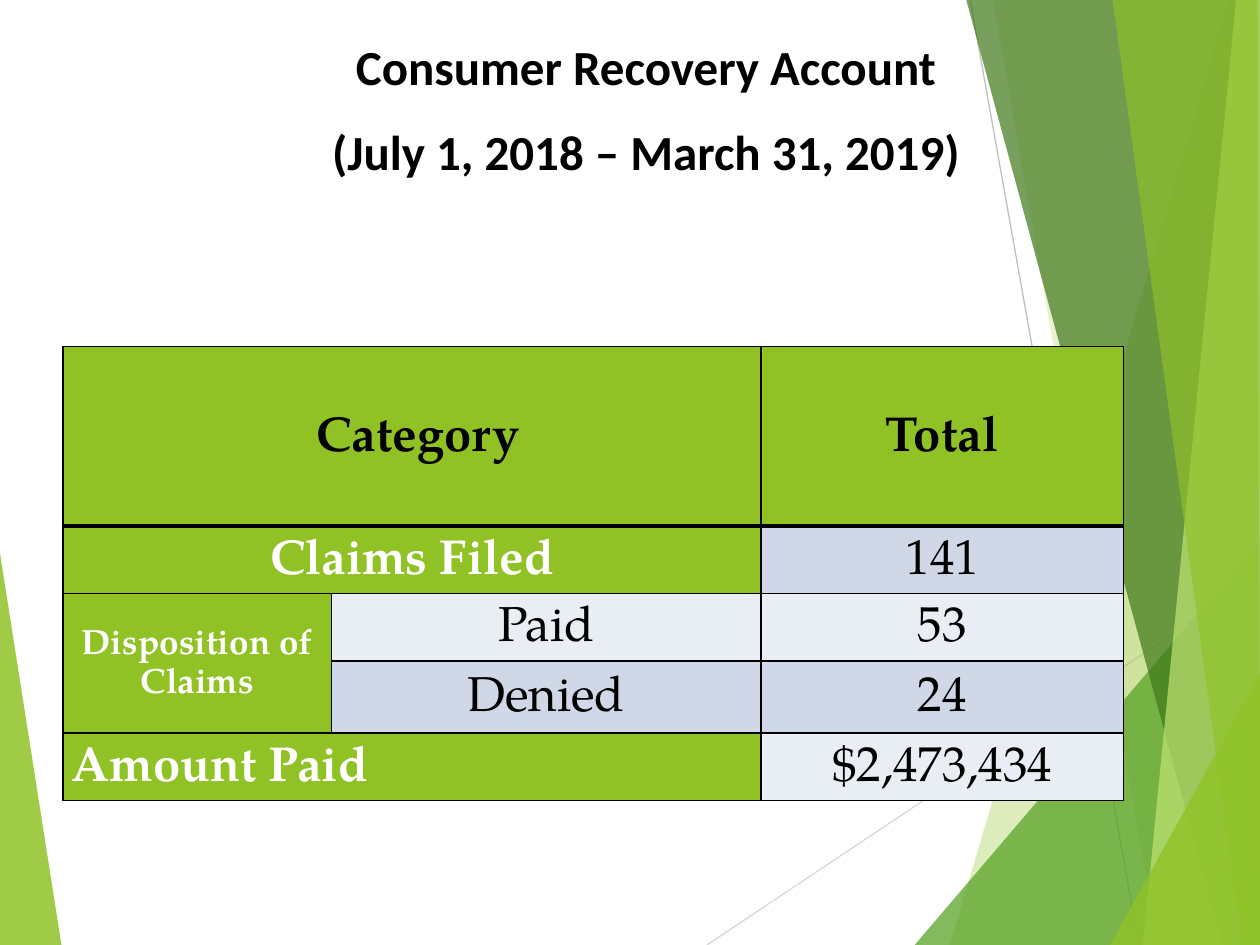
import pptx
import pptx.util
import pptx.dml.color
import pptx.enum.shapes
import pptx.enum.text
import pptx.oxml
import pptx.oxml.ns
import lxml.etree

Cm = pptx.util.Cm
Pt = pptx.util.Pt
RGBColor = pptx.dml.color.RGBColor
Align = pptx.enum.text.PP_ALIGN

BLACK = RGBColor(0x00, 0x00, 0x00)
WHITE = RGBColor(0xFF, 0xFF, 0xFF)
LIME = RGBColor(0x90, 0xC2, 0x26)
GREEN = RGBColor(0x54, 0xA0, 0x21)
FOREST = RGBColor(0x3F, 0x78, 0x19)
PALE_LIME = RGBColor(0xC0, 0xE4, 0x74)
BAND_DARK = RGBColor(0xD0, 0xD8, 0xE8)
BAND_LIGHT = RGBColor(0xE9, 0xED, 0xF4)
GREY = RGBColor(0xBF, 0xBF, 0xBF)
LIGHT_GREY = RGBColor(0xD9, 0xD9, 0xD9)

TITLE_FONT = "Calibri"
TABLE_FONT = "TeX Gyre Pagella"
WIDTH, HEIGHT = 25.4, 19.05

TITLE = ["Consumer Recovery Account", "(July 1, 2018 – March 31, 2019)"]

LEFT_FACET = (LIME, 85, [(0, 11.15), (1.24, HEIGHT), (0, HEIGHT)])
RAYS = [
    (LIGHT_GREY, (14.25, HEIGHT), (WIDTH, 11.61)),
    (GREY, (19.56, 0), (22.96, HEIGHT)),
]
RIGHT_FACETS = [
    (LIME, 30, [(24.77, 0), (19.15, HEIGHT), (WIDTH, HEIGHT), (WIDTH, 0)]),
    (LIME, 20, [(20.02, 0), (23.34, HEIGHT), (WIDTH, HEIGHT), (WIDTH, 0)]),
    (GREEN, 72, [(18.44, HEIGHT), (WIDTH, 10.9), (WIDTH, HEIGHT)]),
    (FOREST, 70, [(19.48, 0), (24.64, HEIGHT), (WIDTH, HEIGHT), (WIDTH, 0)]),
    (PALE_LIME, 70, [(24.92, 0), (23.04, HEIGHT), (WIDTH, HEIGHT), (WIDTH, 0)]),
    (LIME, 65, [(22.43, 0), (25.04, HEIGHT), (WIDTH, HEIGHT), (25.35, 0)]),
    (LIME, 80, [(22.38, HEIGHT), (WIDTH, 13.59), (WIDTH, HEIGHT)]),
]

COLUMNS = [5.41, 8.66, 7.31]
ROWS = [3.61, 1.17, 1.17, 1.45, 1.35]
MERGES = [((0, 0), (0, 1)), ((1, 0), (1, 1)), ((2, 0), (3, 0)), ((4, 0), (4, 1))]
HEAD = {"color": BLACK, "bold": True}
LABEL = {"color": WHITE, "bold": True}
VALUE = {"color": BLACK, "bold": False}
CELLS = [
    (0, 0, " Category", LIME, HEAD),
    (0, 2, "Total", LIME, HEAD),
    (1, 0, "Claims Filed", LIME, LABEL),
    (1, 2, "141", BAND_DARK, VALUE),
    (2, 0, "Disposition of Claims", LIME, {**LABEL, "size": 20}),
    (2, 1, "Paid", BAND_LIGHT, VALUE),
    (2, 2, "53", BAND_LIGHT, VALUE),
    (3, 1, "Denied", BAND_DARK, VALUE),
    (3, 2, "24", BAND_DARK, VALUE),
    (4, 0, "Amount Paid", LIME, {**LABEL, "align": Align.LEFT}),
    (4, 2, "$2,473,434", BAND_LIGHT, VALUE),
]


def write(frame, lines, font=TABLE_FONT, size=28, color=BLACK, bold=True,
          align=Align.CENTER, before=6, after=6):
    frame.word_wrap = True
    for index, text in enumerate(lines):
        para = frame.paragraphs[0] if index == 0 else frame.add_paragraph()
        para.alignment = align
        para.line_spacing = 1.15
        para.space_before = Pt(before)
        para.space_after = Pt(after)
        span = para.add_run()
        span.text = text
        span.font.name = font
        span.font.size = Pt(size)
        span.font.bold = bold
        span.font.color.rgb = color


def add_facet(page, color, opacity, points):
    corners = [(Cm(x), Cm(y)) for x, y in points]
    builder = page.shapes.build_freeform(*corners[0])
    builder.add_line_segments(corners[1:], close=True)
    shape = builder.convert_to_shape()
    shape.shadow.inherit = False
    shape.line.fill.background()
    shape.fill.solid()
    shape.fill.fore_color.rgb = color
    tint = shape._element.spPr.find(".//" + pptx.oxml.ns.qn("a:srgbClr"))
    alpha = lxml.etree.SubElement(tint, pptx.oxml.ns.qn("a:alpha"))
    alpha.set("val", str(opacity * 1000))


def add_ray(page, color, start, end):
    ray = page.shapes.add_connector(
        pptx.enum.shapes.MSO_CONNECTOR.STRAIGHT, *map(Cm, start + end))
    ray.line.color.rgb = color
    ray.line.width = Pt(0.75)
    lxml.etree.SubElement(ray._element.spPr, pptx.oxml.ns.qn("a:effectLst"))


def add_borders(cell, widths):
    properties = cell._tc.get_or_add_tcPr()
    for side, width in widths.items():
        properties.append(pptx.oxml.parse_xml(
            f'<a:ln{side} {pptx.oxml.ns.nsdecls("a")} w="{Pt(width)}">'
            f'<a:solidFill><a:srgbClr val="{BLACK}"/></a:solidFill></a:ln{side}>'))


def add_claims_table(page):
    table = page.shapes.add_table(
        len(ROWS), len(COLUMNS), Cm(1.27), Cm(6.99),
        Cm(sum(COLUMNS)), Cm(sum(ROWS))).table
    table.first_row = table.horz_banding = False
    for column, width in zip(table.columns, COLUMNS):
        column.width = Cm(width)
    for row, height in zip(table.rows, ROWS):
        row.height = Cm(height)
    for first, last in MERGES:
        table.cell(*first).merge(table.cell(*last))
    for row in range(len(ROWS)):
        for column in range(len(COLUMNS)):
            add_borders(table.cell(row, column), {
                "L": 1, "R": 1, "T": 3 if row == 1 else 1, "B": 3 if row == 0 else 1})
    for row, column, text, fill, style in CELLS:
        cell = table.cell(row, column)
        cell.fill.solid()
        cell.fill.fore_color.rgb = fill
        cell.vertical_anchor = pptx.enum.text.MSO_ANCHOR.MIDDLE
        cell.margin_left = cell.margin_right = Cm(0.18)
        cell.margin_top = cell.margin_bottom = 0
        write(cell.text_frame, [text], **style)


def main():
    deck = pptx.Presentation()
    deck.slide_width, deck.slide_height = Cm(WIDTH), Cm(HEIGHT)
    page = deck.slides.add_slide(deck.slide_layouts[6])
    add_facet(page, *LEFT_FACET)
    for ray in RAYS:
        add_ray(page, *ray)
    for facet in RIGHT_FACETS:
        add_facet(page, *facet)
    box = page.shapes.add_textbox(Cm(1.27), Cm(0.43), Cm(23.5), Cm(3.38))
    write(box.text_frame, TITLE, font=TITLE_FONT, before=0, after=10)
    add_claims_table(page)
    deck.save("out.pptx")


if __name__ == "__main__":
    main()
